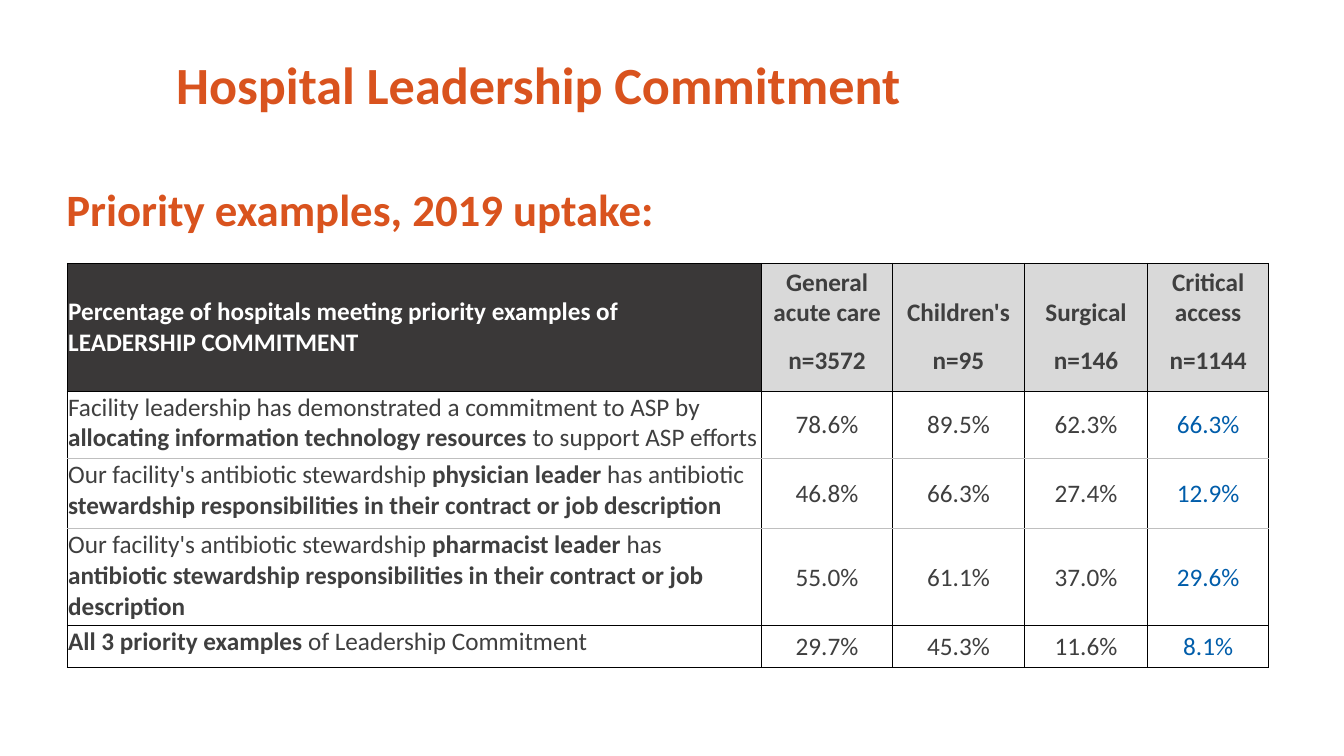
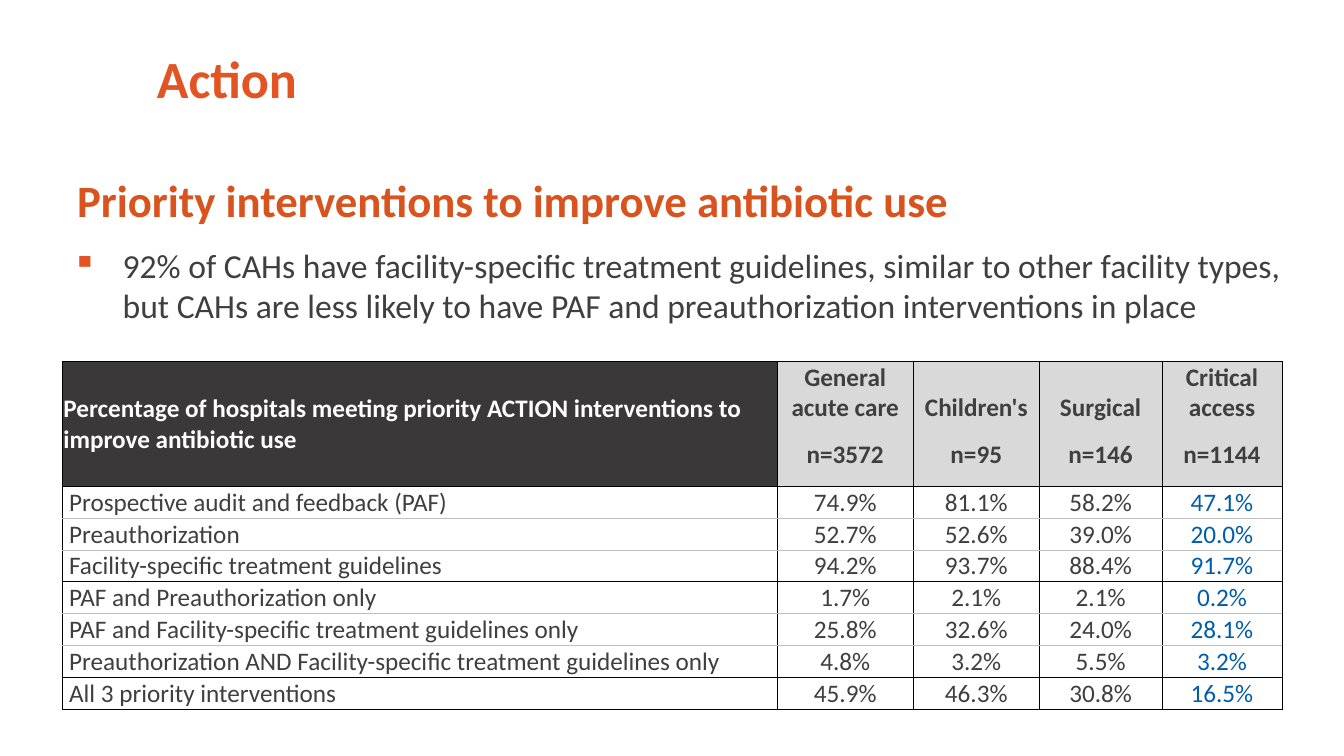
"""Build two slides of hospital antibiotic stewardship results."""
from lxml import etree
from pptx import Presentation
from pptx import util as u
from pptx.dml.color import RGBColor
from pptx.enum import text
from pptx.oxml import ns

COLOURS = {
    "heading": "D9531E", "accent": "E25423", "ink": "3F3F3F", "white": "FFFFFF",
    "dark": "3A3838", "grey": "D9D9D9", "blue": "005DAA",
    "rule": "000000", "hairline": "BFBFBF",
}
FONT = "Calibri"
HEADING = {"size": 32, "colour": "heading", "bold": True}
TITLE = {**HEADING, "size": 37.3}
CELL = {"size": 18, "colour": "ink", "bold": False}
HEADER = {**CELL, "bold": True}
CELL_MARGINS = {"margin_left": 0.7, "margin_right": 0.7, "margin_top": 0.7, "margin_bottom": 0}
HOSPITALS = [("General acute care", "n=3572"), ("Children's", "n=95"),
             ("Surgical", "n=146"), ("Critical access", "n=1144")]

LEADERSHIP = {
    "header": "Percentage of hospitals meeting priority examples of\nLEADERSHIP COMMITMENT",
    "columns": [496, 93.6, 94.2, 88, 86.4],
    "heights": [46.8, 44.6, 48.2, 50, 69.3, 30],
    "groups": [3, 1], "label_anchor": text.MSO_ANCHOR.TOP, "label_indent": 0,
    "rows": [
        ("Facility leadership has demonstrated a commitment to ASP by "
         "*allocating information technology resources* to support ASP efforts",
         "78.6%", "89.5%", "62.3%", "66.3%"),
        ("Our facility's antibiotic stewardship *physician leader* has antibiotic "
         "*stewardship responsibilities in their contract or job description*",
         "46.8%", "66.3%", "27.4%", "12.9%"),
        ("Our facility's antibiotic stewardship *pharmacist leader* has "
         "*antibiotic stewardship responsibilities in their contract or job description*",
         "55.0%", "61.1%", "37.0%", "29.6%"),
        ("*All 3 priority examples* of Leadership Commitment",
         "29.7%", "45.3%", "11.6%", "8.1%"),
    ],
}
ACTION = {
    "header": "Percentage of hospitals meeting priority ACTION interventions to "
              "improve antibiotic use",
    "columns": [510.6, 97.2, 90, 87.6, 85.8],
    "heights": [44.6, 44.6] + [22.8] * 7,
    "groups": [3, 3, 1], "label_anchor": text.MSO_ANCHOR.MIDDLE, "label_indent": 4.1,
    "rows": [
        ("Prospective audit and feedback (PAF)", "74.9%", "81.1%", "58.2%", "47.1%"),
        ("Preauthorization", "52.7%", "52.6%", "39.0%", "20.0%"),
        ("Facility-specific treatment guidelines", "94.2%", "93.7%", "88.4%", "91.7%"),
        ("PAF and Preauthorization only", "1.7%", "2.1%", "2.1%", "0.2%"),
        ("PAF and Facility-specific treatment guidelines only",
         "25.8%", "32.6%", "24.0%", "28.1%"),
        ("Preauthorization AND Facility-specific treatment guidelines only",
         "4.8%", "3.2%", "5.5%", "3.2%"),
        ("All 3 priority interventions", "45.9%", "46.3%", "30.8%", "16.5%"),
    ],
}


def rgb(name):
    """Return the named colour."""
    return RGBColor.from_string(COLOURS[name])


def write_spans(para, words, style):
    """Fill a paragraph, switching bold at each asterisk."""
    for index, part in enumerate(words.split("*")):
        if part:
            span = para.add_run()
            span.text = part
            bold = style["bold"] or index % 2 == 1
            values = {"name": FONT, "size": u.Pt(style["size"]), "bold": bold}
            for key, value in values.items():
                setattr(span.font, key, value)
            span.font.color.rgb = rgb(style["colour"])


def add_text(page, box, words, style, anchor=text.MSO_ANCHOR.BOTTOM, spacing=40):
    """Place one wrapped paragraph in a box and return it."""
    frame = page.shapes.add_textbox(*map(u.Pt, box)).text_frame
    for key, value in {"word_wrap": True, "vertical_anchor": anchor}.items():
        setattr(frame, key, value)
    para = frame.paragraphs[0]
    if spacing:
        para.line_spacing = u.Pt(spacing)
    write_spans(para, words, style)
    return para


def add_bullet(page, box, words):
    """Place a paragraph with a square bullet in a box."""
    para = add_text(page, box, words, {**CELL, "size": 24}, text.MSO_ANCHOR.TOP, None)
    props = para._p.get_or_add_pPr()
    props.set("marL", str(u.Pt(36)))
    props.set("indent", str(-u.Pt(36)))
    colour = etree.SubElement(props, ns.qn("a:buClr"))
    etree.SubElement(colour, ns.qn("a:srgbClr"), val=COLOURS["accent"])
    etree.SubElement(props, ns.qn("a:buChar"), char="▪")


def set_borders(cell, top, bottom):
    """Draw black sides and the given top and bottom; None leaves an edge open."""
    props = cell._tc.get_or_add_tcPr()
    for side, colour in {"L": "rule", "R": "rule", "T": top, "B": bottom}.items():
        line = etree.SubElement(props, ns.qn(f"a:ln{side}"), w=str(u.Pt(0.5)))
        if colour:
            fill = etree.SubElement(line, ns.qn("a:solidFill"))
            etree.SubElement(fill, ns.qn("a:srgbClr"), val=COLOURS[colour])
        else:
            etree.SubElement(line, ns.qn("a:noFill"))


def fill_cell(cell, words, style, fill, anchor, align, indent=0):
    """Write, align and shade one table cell."""
    for key, value in CELL_MARGINS.items():
        setattr(cell, key, u.Pt(value))
    cell.margin_left = u.Pt(CELL_MARGINS["margin_left"] + indent)
    cell.vertical_anchor = anchor
    cell.fill.solid()
    cell.fill.fore_color.rgb = rgb(fill)
    frame = cell.text_frame
    for index, line in enumerate(words.split("\n")):
        para = frame.add_paragraph() if index else frame.paragraphs[0]
        para.alignment = align
        write_spans(para, line, style)


def row_edges(groups):
    """List the line colours above and below each table row."""
    edges = ["rule", None, "rule"]
    for size in groups:
        edges += ["hairline"] * (size - 1) + ["rule"]
    return list(zip(edges, edges[1:]))


def add_results(page, left, top, data):
    """Place a results table with a two-row header at a corner."""
    columns, heights = data["columns"], data["heights"]
    size = (left, top, sum(columns), sum(heights))
    table = page.shapes.add_table(len(heights), len(columns), *map(u.Pt, size)).table
    for key in ("first_row", "horz_banding"):
        setattr(table, key, False)
    for column, width in zip(table.columns, columns):
        column.width = u.Pt(width)
    for row, height, edges in zip(table.rows, heights, row_edges(data["groups"])):
        row.height = u.Pt(height)
        for cell in row.cells:
            set_borders(cell, *edges)

    centre, start = text.PP_ALIGN.CENTER, text.PP_ALIGN.LEFT
    middle, bottom = text.MSO_ANCHOR.MIDDLE, text.MSO_ANCHOR.BOTTOM
    corner = table.cell(0, 0)
    corner.merge(table.cell(1, 0))
    fill_cell(corner, data["header"], {**HEADER, "colour": "white"}, "dark", middle, start)
    for col, (name, count) in enumerate(HOSPITALS, 1):
        fill_cell(table.cell(0, col), name, HEADER, "grey", bottom, centre)
        fill_cell(table.cell(1, col), count, HEADER, "grey", middle, centre)
    for row, (label, *shares) in enumerate(data["rows"], 2):
        fill_cell(table.cell(row, 0), label, CELL, "white", data["label_anchor"], start,
                  data["label_indent"])
        for col, share in enumerate(shares, 1):
            colour = "blue" if col == len(shares) else "ink"
            fill_cell(table.cell(row, col), share, {**CELL, "colour": colour},
                      "white", middle, centre)


def leadership_page(page):
    """Build the leadership commitment slide."""
    add_text(page, (40.3, 98, 864, 74), "Priority examples, 2019 uptake:", HEADING)
    add_results(page, 48, 188, LEADERSHIP)
    add_text(page, (118.8, 30, 602, 55.6), "Hospital Leadership Commitment", TITLE)


def action_page(page):
    """Build the action slide."""
    add_text(page, (48, 86.4, 864, 79.2),
             "Priority interventions to improve antibiotic use", HEADING)
    add_bullet(page, (44.6, 171.4, 880, 80),
               "92% of CAHs have facility-specific treatment guidelines, similar to other "
               "facility types, but CAHs are less likely to have PAF and preauthorization "
               "interventions in place")
    add_results(page, 44.6, 258, ACTION)
    add_text(page, (105, 32.4, 403, 49), "Action", {**TITLE, "colour": "accent"})


def main():
    """Create and save the deck."""
    deck = Presentation()
    deck.slide_width, deck.slide_height = u.Pt(960), u.Pt(540)
    for build in (leadership_page, action_page):
        build(deck.slides.add_slide(deck.slide_layouts[6]))
    deck.save("out.pptx")


if __name__ == "__main__":
    main()
